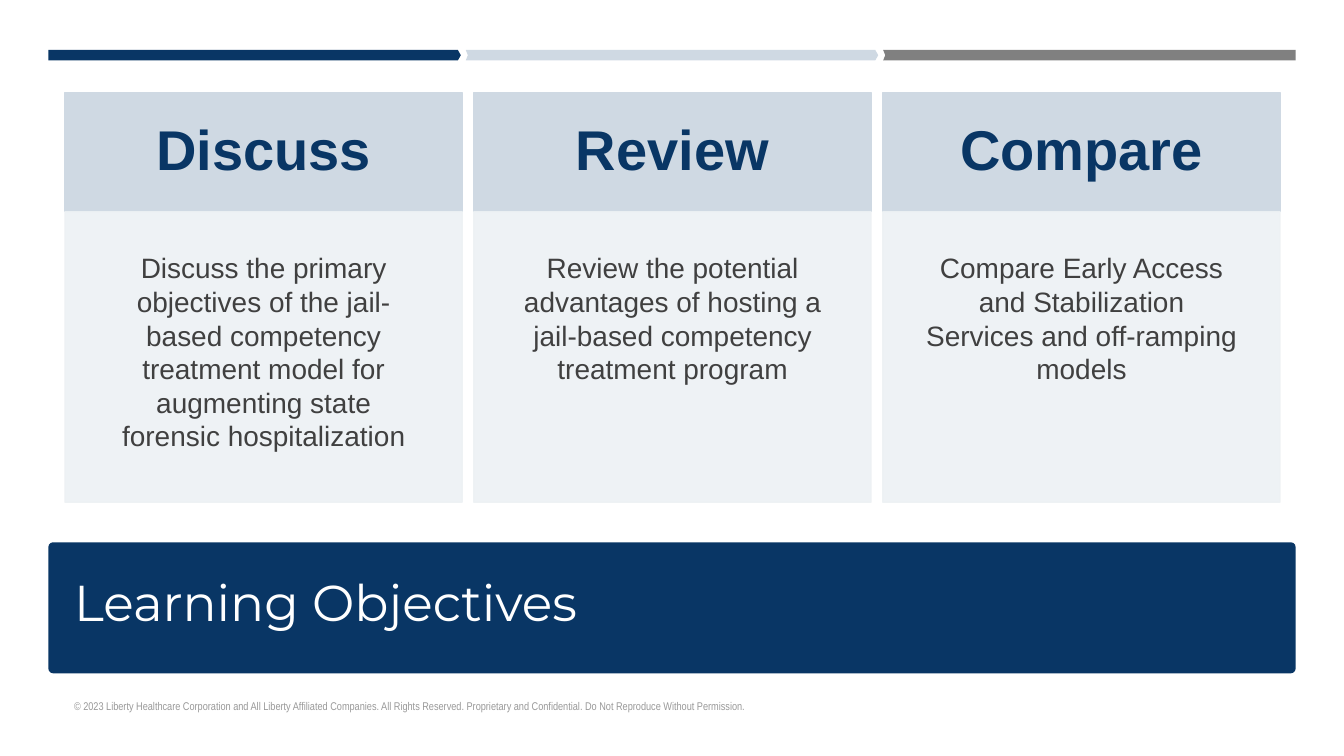
from lxml import etree
from pptx import Presentation
from pptx import util as u
from pptx.dml import color
from pptx.enum import shapes, text
from pptx.oxml import ns

NAVY, PALE, GRAY, MIST = "093665", "CFD9E3", "808080", "EDF1F4"
CARDS = [
    ("Discuss", "Discuss the primary objectives of the jail-based competency treatment model "
                "for augmenting state forensic hospitalization"),
    ("Review", "Review the potential advantages of hosting a jail-based competency treatment program"),
    ("Compare", "Compare Early Access and Stabilization Services and off-ramping models"),
]
CARD_LEFT, CARD_PITCH, CARD_WIDTH = 92.8, 584.3, 567.4
HEADER_TOP, HEADER_HEIGHT, BODY_HEIGHT = 132.5, 170, 415
RIBBON_LEFT, RIBBON_PITCH, RIBBON_WIDTH = 69.1, 596.35, 589.3
RIBBON_TOP, RIBBON_HEIGHT, TIP, NOTCH = 71.3, 15.1, 4.3, 3


def rgb(value):
    return color.RGBColor.from_string(value)


class SlideBuilder:
    def __init__(self, slide):
        self.slide = slide

    def paint(self, shape, fill, line=None, opacity=100):
        shape.shadow.inherit = False
        shape.fill.solid()
        shape.fill.fore_color.rgb = rgb(fill)
        if line:
            shape.line.width = u.Pt(2)
            shape.line.color.rgb = rgb(line)
        else:
            shape.line.fill.background()
        if opacity < 100:
            for element in shape.element.spPr.iter(ns.qn("a:srgbClr")):
                etree.SubElement(element, ns.qn("a:alpha"), val=str(opacity * 1000))

    def set_text(self, shape, words, font, size, ink, margins, bold=False,
                 align=text.PP_ALIGN.LEFT, anchor=text.MSO_ANCHOR.MIDDLE, spacing=None):
        frame = shape.text_frame
        frame.word_wrap = True
        frame.vertical_anchor = anchor
        frame.margin_left = frame.margin_right = u.Pt(margins[0])
        frame.margin_top = frame.margin_bottom = u.Pt(margins[1])
        paragraph = frame.paragraphs[0]
        paragraph.text = words
        paragraph.alignment = align
        paragraph.line_spacing = spacing
        paragraph.font.name = font
        paragraph.font.size = u.Pt(size)
        paragraph.font.bold = bold
        paragraph.font.color.rgb = rgb(ink)

    def box(self, left, top, width, height, fill, line=None, opacity=100, radius=None):
        kind = shapes.MSO_SHAPE.RECTANGLE if radius is None else shapes.MSO_SHAPE.ROUNDED_RECTANGLE
        shape = self.slide.shapes.add_shape(kind, u.Pt(left), u.Pt(top), u.Pt(width), u.Pt(height))
        if radius is not None:
            shape.adjustments[0] = radius
        self.paint(shape, fill, line, opacity)
        return shape

    def label(self, left, top, width, height, words, font, size, ink, spacing=None):
        shape = self.slide.shapes.add_textbox(u.Pt(left), u.Pt(top), u.Pt(width), u.Pt(height))
        self.set_text(shape, words, font, size, ink, (14.4, 7.2), spacing=spacing)

    def ribbon(self, left, fill, notch, tip):
        right, bottom = left + RIBBON_WIDTH, RIBBON_TOP + RIBBON_HEIGHT
        middle = RIBBON_TOP + RIBBON_HEIGHT / 2
        points = [(left, RIBBON_TOP), (right - tip, RIBBON_TOP), (right, middle),
                  (right - tip, bottom), (left, bottom), (left + notch, middle)]
        outline = [(u.Pt(x), u.Pt(y)) for x, y in points]
        builder = self.slide.shapes.build_freeform(*outline[0], scale=1.0)
        builder.add_line_segments(outline[1:], close=True)
        self.paint(builder.convert_to_shape(), fill)

    def card(self, left, heading, detail):
        header = self.box(left, HEADER_TOP, CARD_WIDTH, HEADER_HEIGHT, PALE, PALE)
        self.set_text(header, heading, "Arial", 80, NAVY, (44.8, 44.8), bold=True,
                      align=text.PP_ALIGN.CENTER, spacing=0.9)
        body = self.box(left, HEADER_TOP + HEADER_HEIGHT, CARD_WIDTH, BODY_HEIGHT, MIST, MIST, 90)
        self.set_text(body, detail, "Arial", 40, "404040", (56, 56),
                      align=text.PP_ALIGN.CENTER, anchor=text.MSO_ANCHOR.TOP)


def main():
    presentation = Presentation()
    presentation.slide_width, presentation.slide_height = u.Pt(1920.24), u.Pt(1080)
    builder = SlideBuilder(presentation.slides.add_slide(presentation.slide_layouts[6]))

    for index, (fill, notch, tip) in enumerate([(NAVY, 0, TIP), (PALE, NOTCH, TIP), (GRAY, NOTCH, 0)]):
        builder.ribbon(RIBBON_LEFT + index * RIBBON_PITCH, fill, notch, tip)

    builder.box(RIBBON_LEFT, 774.7, 1782, 187.2, NAVY, radius=0.036)
    builder.label(91.4, 810.7, 1023.1, 108.7, "Learning Objectives", "Montserrat", 72, "FFFFFF", 0.9)
    builder.label(91.4, 979.2, 1089.4, 57.6,
                  "© 2023 Liberty Healthcare Corporation and All Liberty Affiliated Companies. "
                  "All Rights Reserved. Proprietary and Confidential. "
                  "Do Not Reproduce Without Permission.", "Arial Narrow", 16, "999999")

    for index, (heading, detail) in enumerate(CARDS):
        builder.card(CARD_LEFT + index * CARD_PITCH, heading, detail)

    presentation.save("out.pptx")


if __name__ == "__main__":
    main()
